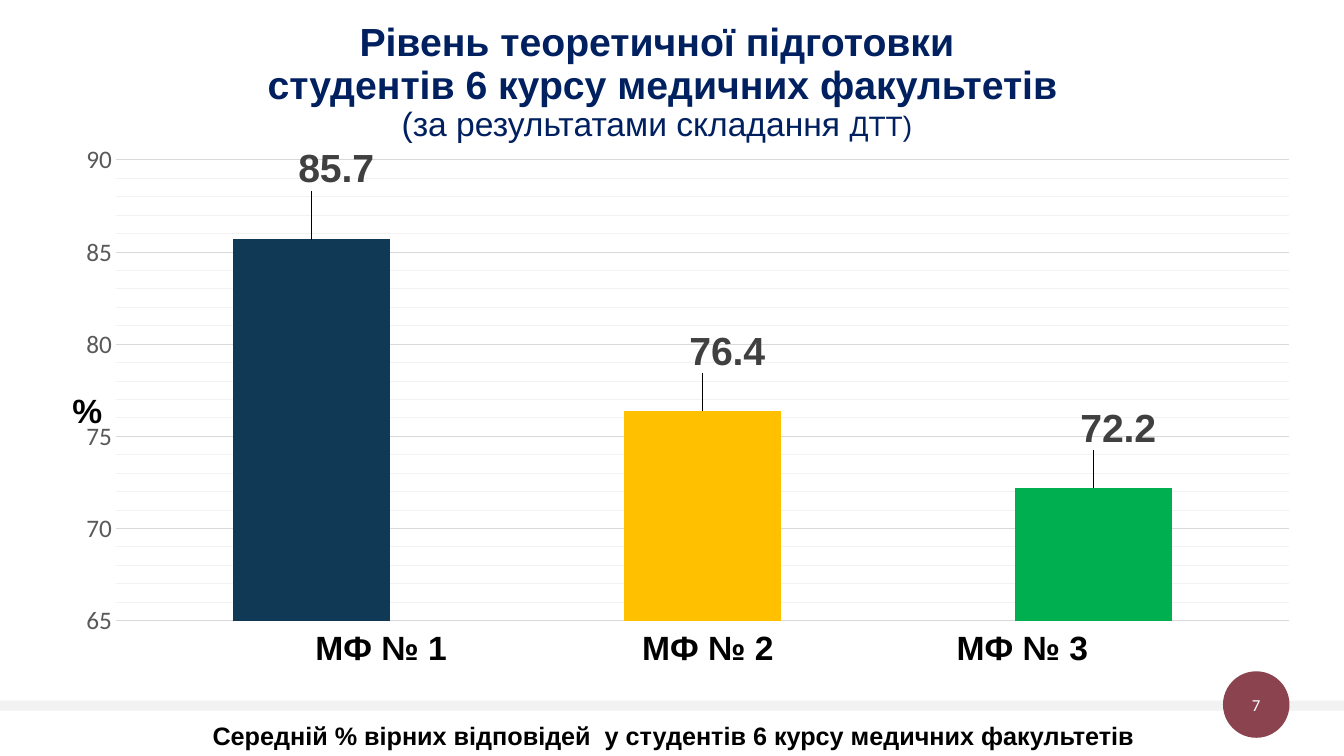
from pptx import Presentation
from pptx.chart.data import CategoryChartData
from pptx.dml.color import RGBColor
from pptx.enum import chart as ch, shapes, text
from pptx.oxml import parse_xml
from pptx.oxml.ns import nsdecls
from pptx.util import Inches, Pt

HUES = {"title": "002060", "black": "000000", "white": "FFFFFF", "band": "F2F2F2",
        "badge": "8A434F", "tick": "595959", "label": "404040", "grid": "D9D9D9",
        "navy": "0F3955", "gold": "FFC000", "green": "00B050"}


def style(font, size, hue, bold=False, face="Arial"):
    font.name, font.size, font.bold = face, Pt(size), bold
    font.color.rgb = RGBColor.from_string(HUES[hue])


def layout(x, y, size=None):
    """Make a manual chart layout; with a size it places the inner plot."""
    tags = [("x", x), ("y", y)]
    if size:
        tags = [("layoutTarget", "inner"), ("xMode", "edge"), ("yMode", "edge"),
                *tags, ("w", size[0]), ("h", size[1])]
    body = "".join(f'<c:{tag} val="{val}"/>' for tag, val in tags)
    return parse_xml(f'<c:layout {nsdecls("c")}><c:manualLayout>{body}'
                     '</c:manualLayout></c:layout>')


prs = Presentation()
prs.slide_width, prs.slide_height = Inches(13.33), Inches(7.5)
slide = prs.slides.add_slide(prs.slide_layouts[6])

# Footer band and page badge
for kind, x, y, w, h, hue in [
    (shapes.MSO_SHAPE.RECTANGLE, 0, 6.95, 13.33, 0.1, "band"),
    (shapes.MSO_SHAPE.OVAL, 12.13, 6.66, 0.66, 0.66, "badge"),
]:
    shape = slide.shapes.add_shape(kind, Inches(x), Inches(y), Inches(w), Inches(h))
    shape.shadow.inherit = False
    shape.fill.solid()
    shape.fill.fore_color.rgb = RGBColor.from_string(HUES[hue])
    shape.line.fill.background()
frame = shape.text_frame
frame.margin_left = frame.margin_right = frame.margin_top = frame.margin_bottom = 0
frame.vertical_anchor = text.MSO_ANCHOR.MIDDLE
para = frame.paragraphs[0]
para.alignment = text.PP_ALIGN.CENTER
run = para.add_run()
run.text = "7"
style(run.font, 12, "white", face="Calibri")

# Title
box = slide.shapes.add_textbox(Inches(0.51), Inches(0.18), Inches(12.11), Inches(1.16))
frame = box.text_frame
frame.word_wrap = True
frame.margin_left = 0
para = frame.paragraphs[0]
para.alignment = text.PP_ALIGN.CENTER
para.line_spacing = 0.9
for words, size, bold, ends in [
    ("Рівень теоретичної підготовки", 28, True, True),
    (" студентів 6 курсу медичних факультетів", 28, True, True),
    ("(за результатами складання ", 24, False, False),
    ("ДТТ)", 20, False, False),
]:
    run = para.add_run()
    run.text = words
    style(run.font, size, "title", bold)
    if ends:
        para.add_line_break()

# Chart
data = CategoryChartData()
data.categories = ["1", "2", "3"]
data.add_series("Series 1", [85.7, 76.4, 72.2])
chart = slide.shapes.add_chart(
    ch.XL_CHART_TYPE.COLUMN_CLUSTERED, Inches(0.51), Inches(1.33),
    Inches(12.3), Inches(5.48), data).chart
chart.has_legend = chart.has_title = False
style(chart.font, 10, "black", face="Calibri")
area = chart._chartSpace.xpath("c:chart/c:plotArea")[0]
for old in area.xpath("c:layout"):
    area.remove(old)
area.insert(0, layout(0.052, 0.047, (0.946, 0.834)))

chart.category_axis.visible = False
axis = chart.value_axis
axis.minimum_scale, axis.maximum_scale = 65, 90
axis.major_unit, axis.minor_unit = 5, 1
axis.major_tick_mark = axis.minor_tick_mark = ch.XL_TICK_MARK.NONE
axis.format.line.fill.background()
style(axis.tick_labels.font, 18, "tick", face="Calibri")
axis.has_major_gridlines = axis.has_minor_gridlines = True
grid = axis.major_gridlines.format.line
grid.width = Pt(0.75)
grid.color.rgb = RGBColor.from_string(HUES["grid"])
minor = area.xpath("c:valAx/c:minorGridlines")[0]
minor.append(parse_xml(
    f'<c:spPr {nsdecls("c", "a")}><a:ln w="{Pt(0.75)}"><a:solidFill>'
    f'<a:srgbClr val="{HUES["band"]}"/></a:solidFill></a:ln></c:spPr>'))

plot = chart.plots[0]
plot.gap_width = 150
plot.vary_by_categories = False
bars = plot.series[0]
bars.data_labels.show_value = True
style(bars.data_labels.font, 28, "label", True)
for i, (hue, rise) in enumerate([("navy", 0.08), ("gold", 0.06), ("green", 0.06)]):
    point = bars.points[i]
    point.format.fill.solid()
    point.format.fill.fore_color.rgb = RGBColor.from_string(HUES[hue])
    point.data_label.position = ch.XL_LABEL_POSITION.OUTSIDE_END
    style(point.data_label.font, 28, "label", True)
    idx = bars._element.xpath(f'c:dLbls/c:dLbl/c:idx[@val="{i}"]')[0]
    idx.addnext(layout(0.02, -rise))

# Captions
mid, left = text.PP_ALIGN.CENTER, text.PP_ALIGN.LEFT
for words, x, y, w, h, size, align in [
    ("Середній % вірних відповідей  у студентів 6 курсу медичних факультетів",
     2.01, 7.1, 9.9, 0.4, 18, left),
    ("МФ № 1", 2.93, 6.17, 1.7, 0.5, 24, mid),
    ("МФ № 2", 6.17, 6.17, 1.7, 0.5, 24, mid),
    ("МФ № 3", 9.29, 6.17, 1.7, 0.5, 24, mid),
    ("%", 0.62, 3.82, 0.5, 0.5, 24, left),
]:
    box = slide.shapes.add_textbox(Inches(x), Inches(y), Inches(w), Inches(h))
    box.text_frame.word_wrap = words != "%"
    para = box.text_frame.paragraphs[0]
    para.alignment = align
    run = para.add_run()
    run.text = words
    style(run.font, size, "black", True)

prs.save("out.pptx")
